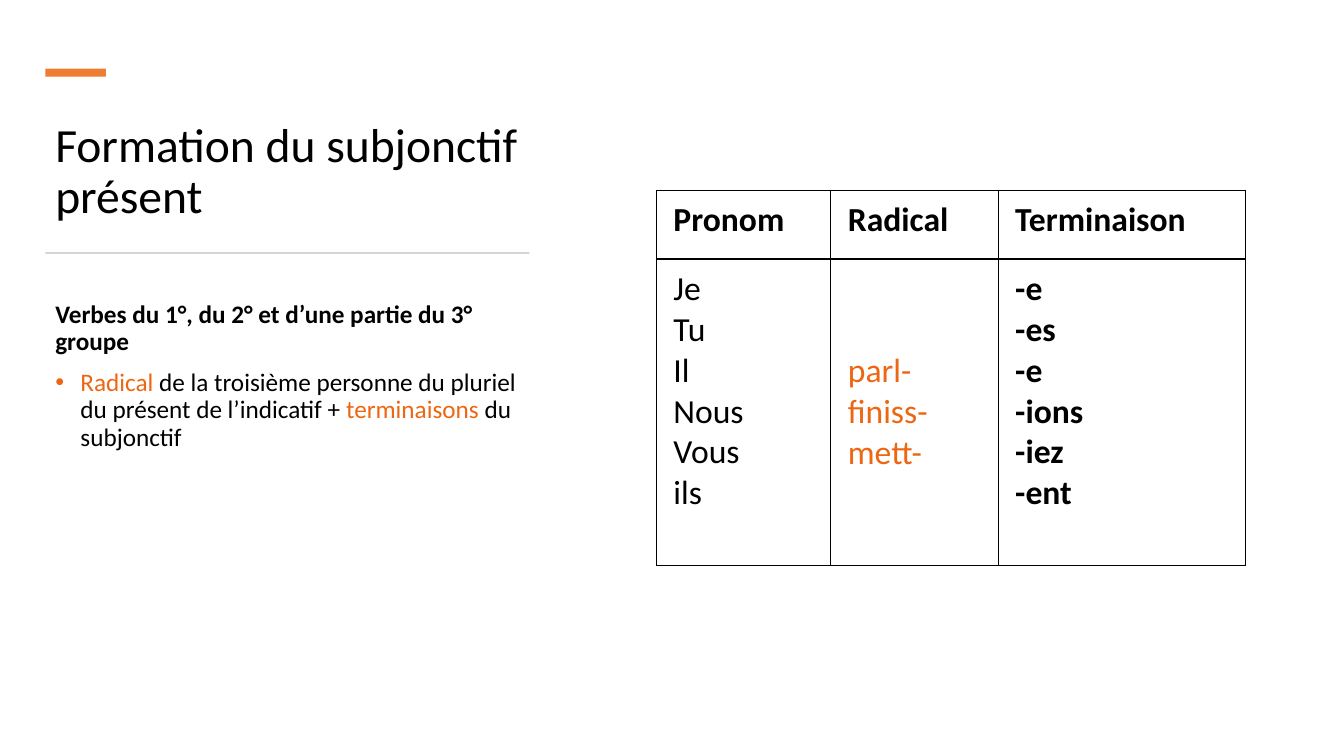
from lxml import etree
from pptx import Presentation
from pptx.dml.color import RGBColor
from pptx.enum.shapes import MSO_SHAPE
from pptx.enum.text import MSO_ANCHOR
from pptx.oxml.ns import qn
from pptx.util import Inches, Pt

RECT = MSO_SHAPE.RECTANGLE
TOP, MIDDLE, BOTTOM = MSO_ANCHOR.TOP, MSO_ANCHOR.MIDDLE, MSO_ANCHOR.BOTTOM

TITLE = "Formation du subjonctif présent"
SUBTITLE = "Verbes du 1°, du 2° et d’une partie du 3° groupe"
RULE = [  # (text, colour)
    ("Radical", "accent"),
    (" de la troisième personne du pluriel du présent de l’indicatif + ", "text"),
    ("terminaisons", "accent"),
    (" du subjonctif", "text"),
]
COLUMNS = [  # (heading, lines, width, colour, bold, anchor)
    ("Pronom", ["Je", "Tu", "Il", "Nous", "Vous", "ils"], 1.73, "text", False, TOP),
    ("Radical", ["parl-", "finiss-", "mett-"], 1.66, "accent", False, MIDDLE),
    ("Terminaison", ["-e", "-es", "-e", "-ions", "-iez", "-ent"], 2.45, "text", True, TOP),
]
ROWS = [0.68, 3.04]
COLORS = {"text": "000000", "accent": "EE6612", "bar": "ED7D31",
          "line": "D5D5D5", "paper": "FFFFFF"}
FONT = "Calibri"
LEFT, TEXT_W = 0.45, 4.86
TABLE_X, TABLE_Y = 6.51, 1.89


def rgb(name):
    return RGBColor.from_string(COLORS[name])


def style(font, size, color="text", bold=False):
    font.name, font.size, font.bold = FONT, Pt(size), bold
    font.color.rgb = rgb(color)


def add_bar(s, y, w, h, color):
    bar = s.shapes.add_shape(RECT, Inches(LEFT), Inches(y), Inches(w), Inches(h))
    bar.shadow.inherit = False
    bar.fill.solid()
    bar.fill.fore_color.rgb = rgb(color)
    bar.line.fill.background()


def add_text(s, y, h, text, size, bold=False, anchor=TOP):
    box = s.shapes.add_textbox(Inches(LEFT), Inches(y), Inches(TEXT_W), Inches(h))
    tf = box.text_frame
    tf.word_wrap = True
    tf.vertical_anchor = anchor
    p = tf.paragraphs[0]
    p.text = text
    p.line_spacing = 0.9
    style(p.runs[0].font, size, bold=bold)
    return tf


def add_bullet(p):
    pPr = p._p.get_or_add_pPr()
    pPr.set("marL", str(Inches(0.25)))
    pPr.set("indent", str(-Inches(0.25)))
    etree.SubElement(pPr, qn("a:buFont")).set("typeface", "Arial")
    etree.SubElement(pPr, qn("a:buChar")).set("char", "•")


def add_borders(cell):
    """Draw all four sides; the lines must come before the fill."""
    tcPr = cell._tc.get_or_add_tcPr()
    for i, side in enumerate(("a:lnL", "a:lnR", "a:lnT", "a:lnB")):
        ln = etree.Element(qn(side), w=str(Pt(1)))
        fill = etree.SubElement(ln, qn("a:solidFill"))
        etree.SubElement(fill, qn("a:srgbClr")).set("val", COLORS["text"])
        tcPr.insert(i, ln)


def fill_cell(cell, lines, color, bold, anchor):
    cell.margin_left = cell.margin_right = Inches(0.17)
    cell.margin_top = cell.margin_bottom = Inches(0.09)
    cell.vertical_anchor = anchor
    cell.fill.solid()
    cell.fill.fore_color.rgb = rgb("paper")
    cell.text_frame.text = "\n".join(lines)
    for p in cell.text_frame.paragraphs:
        style(p.runs[0].font, 24, color, bold)
    add_borders(cell)


def add_conjugation_table(s):
    width = sum(col[2] for col in COLUMNS)
    table = s.shapes.add_table(len(ROWS), len(COLUMNS), Inches(TABLE_X), Inches(TABLE_Y),
                               Inches(width), Inches(sum(ROWS))).table
    table.horz_banding = False
    for row, h in zip(table.rows, ROWS):
        row.height = Inches(h)
    for c, (heading, lines, w, color, bold, anchor) in enumerate(COLUMNS):
        table.columns[c].width = Inches(w)
        fill_cell(table.cell(0, c), [heading], "text", True, TOP)
        fill_cell(table.cell(1, c), lines, color, bold, anchor)


def main():
    prs = Presentation()
    prs.slide_width, prs.slide_height = Inches(13.33), Inches(7.5)
    s = prs.slides.add_slide(prs.slide_layouts[6])

    add_text(s, 1.08, 1.19, TITLE, 34, anchor=BOTTOM)
    add_bar(s, 0.68, 0.6, 0.08, "bar")
    add_bar(s, 2.5, 4.8, 0.02, "line")

    tf = add_text(s, 2.94, 3.82, SUBTITLE, 18, bold=True)
    p = tf.add_paragraph()
    add_bullet(p)
    p.line_spacing, p.space_before = 0.9, Pt(10)
    for text, color in RULE:
        r = p.add_run()
        r.text = text
        style(r.font, 18, color)

    add_conjugation_table(s)
    prs.save("out.pptx")


if __name__ == "__main__":
    main()
